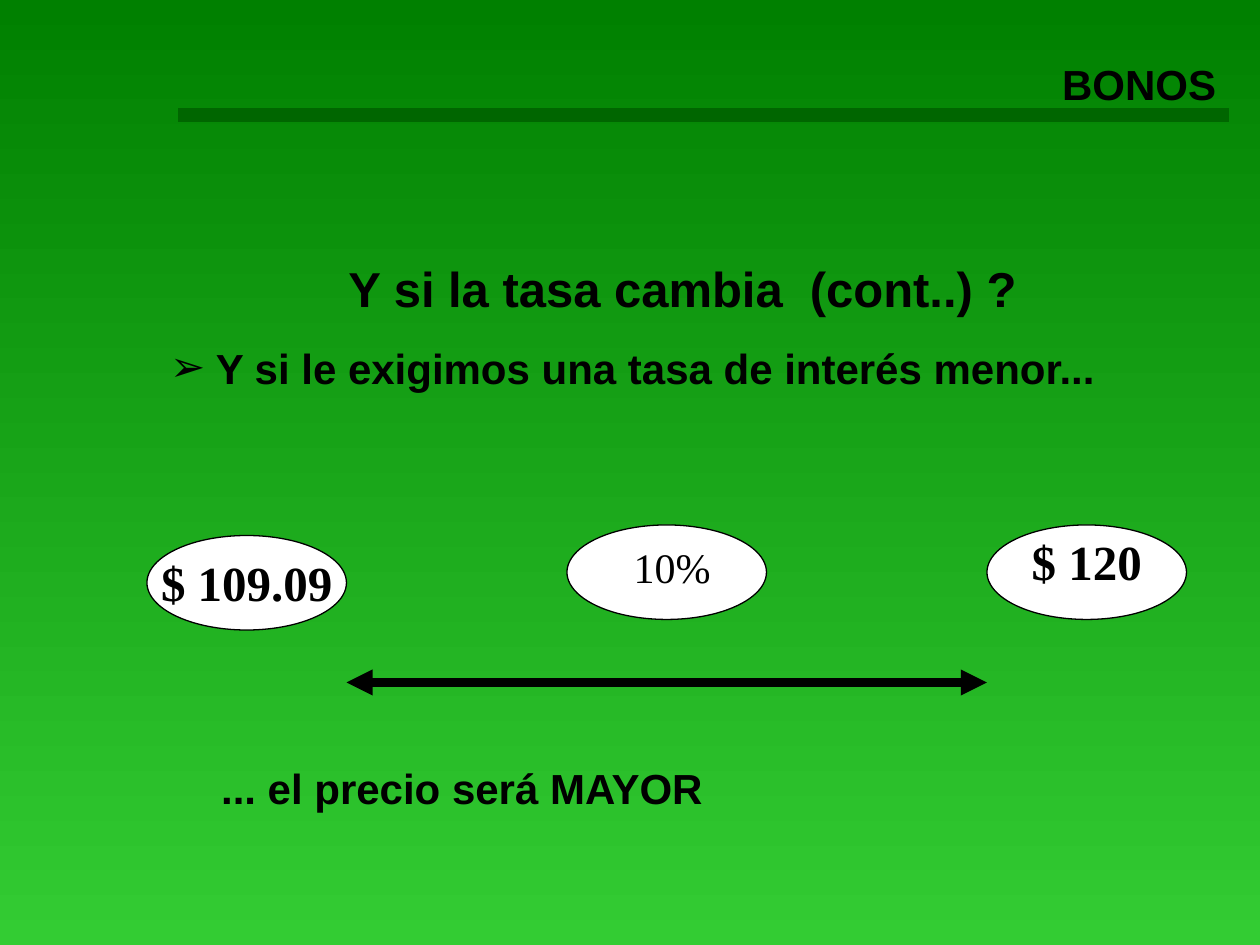
from dataclasses import dataclass

from lxml.etree import SubElement
from pptx import Presentation
from pptx.dml.color import RGBColor
from pptx.enum.shapes import MSO_CONNECTOR, MSO_SHAPE
from pptx.enum.text import MSO_ANCHOR, MSO_AUTO_SIZE, PP_ALIGN
from pptx.oxml.ns import qn
from pptx.util import Pt

EMU_PER_PX = 7620  # 120 px to the inch
COLORS = {
    "black": "000000",
    "white": "FFFFFF",
    "rule": "006600",
    "top": "008000",
    "bottom": "33CC33",
}
SANS, SERIF = "Arial", "Times New Roman"


@dataclass
class Box:
    left: int
    top: int
    width: int
    height: int


@dataclass
class Caption:
    text: str
    box: Box
    size: int = 24
    font: str = SANS
    bold: bool = True
    align: PP_ALIGN = PP_ALIGN.CENTER


@dataclass
class Bubble:
    left: int
    top: int
    label: Caption


BUBBLE_WIDTH, BUBBLE_HEIGHT = 190, 90

TITLE = Caption("Y si la tasa cambia  (cont..) ?", Box(150, 240, 1000, 68), 28)
QUESTION = Caption(" ", Box(150, 320, 990, 60), align=PP_ALIGN.LEFT)
QUESTION_TEXT = "Y si le exigimos una tasa de interés menor..."
CAPTIONS = [
    Caption("BONOS", Box(30, 50, 1140, 60), align=PP_ALIGN.RIGHT),
    Caption("... el precio será MAYOR", Box(170, 720, 540, 60)),
]
BUBBLES = [
    Bubble(140, 510, Caption("$ 109.09", Box(140, 520, 190, 68), 28, SERIF)),
    Bubble(540, 500, Caption("10%", Box(560, 510, 160, 60), 24, SERIF, bold=False)),
    Bubble(940, 500, Caption("$ 120", Box(960, 500, 150, 68), 28, SERIF)),
]


def px(value: int) -> int:
    return value * EMU_PER_PX


def color(name: str) -> RGBColor:
    return RGBColor.from_string(COLORS[name])


def place(shape, box: Box) -> None:
    shape.left, shape.top = px(box.left), px(box.top)
    shape.width, shape.height = px(box.width), px(box.height)


def format_run(run, caption: Caption, font: str) -> None:
    run.font.name = font
    run.font.size = Pt(caption.size)
    run.font.bold = caption.bold
    run.font.color.rgb = color("black")


def fill_caption(shape, caption: Caption):
    """Place a text shape, write its single paragraph and return it."""
    place(shape, caption.box)
    frame = shape.text_frame
    frame.text = caption.text
    frame.word_wrap = True
    frame.auto_size = MSO_AUTO_SIZE.SHAPE_TO_FIT_TEXT
    frame.vertical_anchor = MSO_ANCHOR.TOP
    paragraph = frame.paragraphs[0]
    paragraph.alignment = caption.align
    paragraph.space_before = Pt(0)
    format_run(paragraph.runs[0], caption, caption.font)
    return paragraph


def add_caption(slide, caption: Caption) -> None:
    box = caption.box
    shape = slide.shapes.add_textbox(px(box.left), px(box.top), px(box.width), px(box.height))
    fill_caption(shape, caption)


def add_bullet(paragraph, character: str) -> None:
    properties = paragraph._p.get_or_add_pPr()
    properties.set("marL", "0")
    properties.set("indent", "0")
    SubElement(properties, qn("a:buChar")).set("char", character)


def add_line(slide, left: int, right: int, top: int, name: str, width: int, arrows: bool = False) -> None:
    line = slide.shapes.add_connector(MSO_CONNECTOR.STRAIGHT, px(left), px(top), px(right), px(top))
    line.line.color.rgb = color(name)
    line.line.width = Pt(width)
    if arrows:
        for end in ("a:headEnd", "a:tailEnd"):
            SubElement(line.line._get_or_add_ln(), qn(end)).set("type", "triangle")
    SubElement(line._element.spPr, qn("a:effectLst"))


def add_bubble(slide, bubble: Bubble) -> None:
    oval = slide.shapes.add_shape(
        MSO_SHAPE.OVAL, px(bubble.left), px(bubble.top), px(BUBBLE_WIDTH), px(BUBBLE_HEIGHT)
    )
    oval.shadow.inherit = False
    oval.fill.solid()
    oval.fill.fore_color.rgb = color("white")
    oval.line.color.rgb = color("black")
    oval.line.width = Pt(0.75)
    add_caption(slide, bubble.label)


def paint_background(slide) -> None:
    fill = slide.background.fill
    fill.gradient()
    fill.gradient_angle = 270
    for stop, position, name in zip(fill.gradient_stops, (0, 1), ("top", "bottom")):
        stop.position = position
        stop.color.rgb = color(name)


def main() -> None:
    presentation = Presentation()
    presentation.slide_width, presentation.slide_height = px(1200), px(900)
    slide = presentation.slides.add_slide(presentation.slide_layouts[1])
    paint_background(slide)

    # Title and bulleted question
    fill_caption(slide.shapes.title, TITLE)
    question = fill_caption(slide.placeholders[1], QUESTION)
    question.runs[0].font.name = SERIF
    question_run = question.add_run()
    question_run.text = QUESTION_TEXT
    format_run(question_run, QUESTION, SANS)
    add_bullet(question, "➢")

    # Header rule, then header and conclusion
    add_line(slide, 170, 1170, 110, "rule", 8)
    for caption in CAPTIONS:
        add_caption(slide, caption)

    # Prices and rate, with the arrow between the two prices
    for bubble in BUBBLES:
        add_bubble(slide, bubble)
    add_line(slide, BUBBLES[0].left + BUBBLE_WIDTH, BUBBLES[-1].left, 650, "black", 5, arrows=True)

    presentation.save("out.pptx")


if __name__ == "__main__":
    main()
